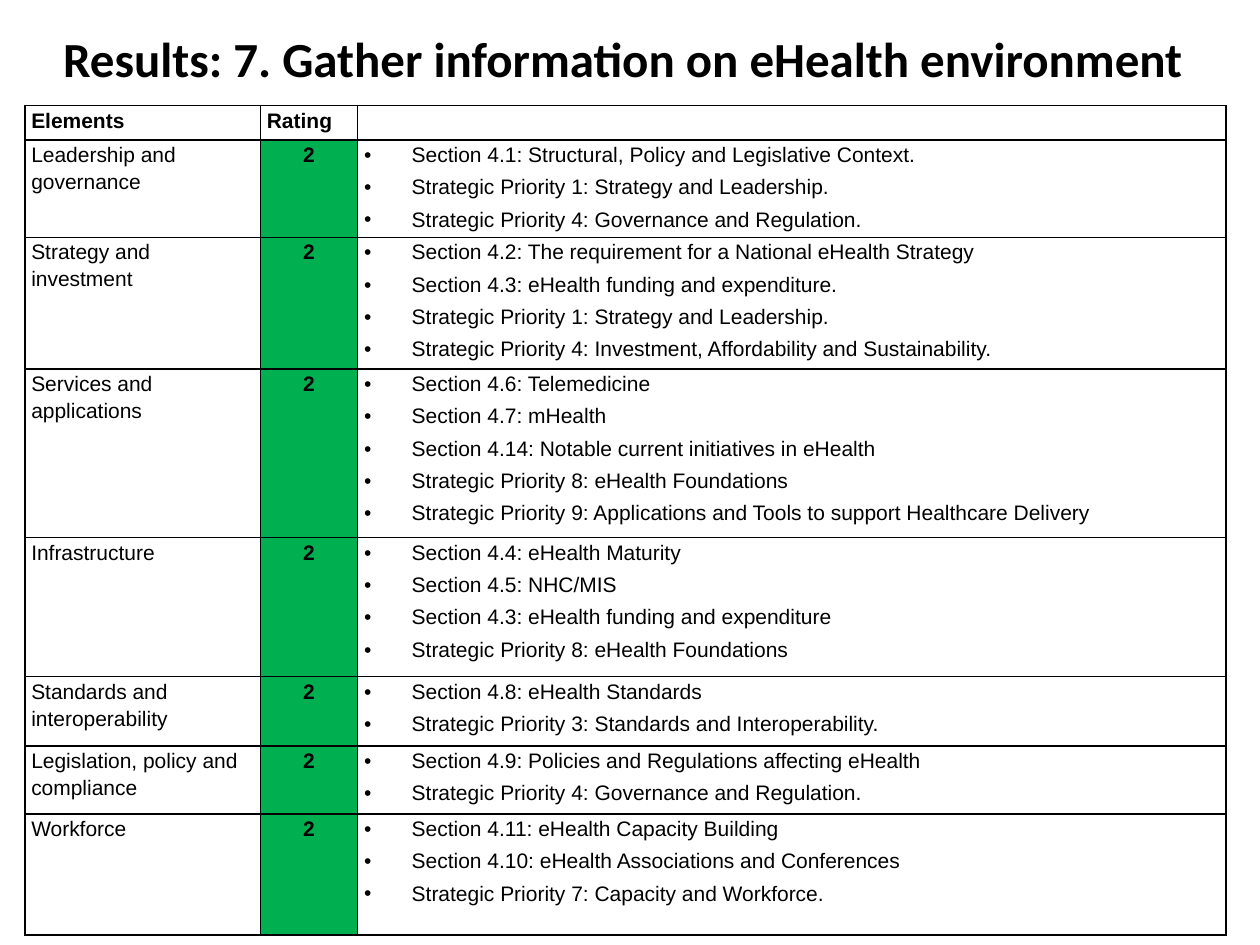
from dataclasses import dataclass

from lxml import etree
from pptx import Presentation
from pptx import util as u
from pptx.dml import color
from pptx.enum import text
from pptx.oxml import ns

BLACK = "000000"
GREEN = "00B050"
COLUMN_WIDTHS = (4.75, 1.96, 17.5)
HEADINGS = ("Elements", "Rating", "")
HEADER_HEIGHT = 0.69


@dataclass
class Element:
    name: str
    height: float
    evidence: tuple[str, ...]
    rating: str = "2"


ELEMENTS = (
    Element("Leadership and governance", 1.93, (
        "Section 4.1: Structural, Policy and Legislative Context.",
        "Strategic Priority 1: Strategy and Leadership.",
        "Strategic Priority 4: Governance and Regulation.",
    )),
    Element("Strategy and investment", 2.59, (
        "Section 4.2: The requirement for a National eHealth Strategy",
        "Section 4.3: eHealth funding and expenditure.",
        "Strategic Priority 1: Strategy and Leadership.",
        "Strategic Priority 4: Investment, Affordability and Sustainability.",
    )),
    Element("Services and applications", 3.4, (
        "Section 4.6: Telemedicine",
        "Section 4.7: mHealth",
        "Section 4.14: Notable current initiatives in eHealth",
        "Strategic Priority 8: eHealth Foundations",
        "Strategic Priority 9: Applications and Tools to support Healthcare Delivery",
    )),
    Element("Infrastructure", 2.8, (
        "Section 4.4: eHealth Maturity",
        "Section 4.5: NHC/MIS",
        "Section 4.3: eHealth funding and expenditure",
        "Strategic Priority 8: eHealth Foundations",
    )),
    Element("Standards and interoperability", 1.4, (
        "Section 4.8: eHealth Standards",
        "Strategic Priority 3: Standards and Interoperability.",
    )),
    Element("Legislation, policy and compliance", 1.37, (
        "Section 4.9: Policies and Regulations affecting eHealth",
        "Strategic Priority 4: Governance and Regulation.",
    )),
    Element("Workforce", 2.44, (
        "Section 4.11: eHealth Capacity Building",
        "Section 4.10: eHealth Associations and Conferences",
        "Strategic Priority 7: Capacity and Workforce.",
    )),
)


def hex_color(value: str) -> color.RGBColor:
    return color.RGBColor.from_string(value)


def add_span(para, words: str, font: str, size: int, bold: bool) -> None:
    span = para.add_run()
    span.text = words
    span.font.name = font
    span.font.size = u.Pt(size)
    span.font.bold = bold
    span.font.color.rgb = hex_color(BLACK)


def add_bullet(para) -> None:
    properties = para._p.get_or_add_pPr()
    indent = u.Cm(0.96)
    properties.set("marL", str(indent))
    properties.set("indent", str(-indent))
    etree.SubElement(properties, ns.qn("a:buFont"), typeface="Arial")
    etree.SubElement(properties, ns.qn("a:buChar"), char="•")


def add_borders(cell) -> None:
    properties = cell._tc.get_or_add_tcPr()
    for side in ("L", "R", "T", "B"):
        line = etree.SubElement(properties, ns.qn(f"a:ln{side}"), w=str(u.Pt(1)))
        fill = etree.SubElement(line, ns.qn("a:solidFill"))
        etree.SubElement(fill, ns.qn("a:srgbClr"), val=BLACK)


def fill_cell(cell, lines: tuple[str, ...], bold: bool = False,
              centred: bool = False, bulleted: bool = False,
              shade: str | None = None) -> None:
    cell.margin_left = cell.margin_right = u.Cm(0.13)
    cell.margin_top = cell.margin_bottom = u.Cm(0)
    add_borders(cell)
    if shade:
        cell.fill.solid()
        cell.fill.fore_color.rgb = hex_color(shade)
    else:
        cell.fill.background()
    frame = cell.text_frame
    for index, words in enumerate(lines):
        para = frame.add_paragraph() if index else frame.paragraphs[0]
        para.line_spacing = 1.15
        para.space_before = u.Pt(3)
        if centred:
            para.alignment = text.PP_ALIGN.CENTER
        if bulleted:
            add_bullet(para)
        if words:
            add_span(para, words, "Arial", 12, bold)
        else:
            etree.SubElement(para._p, ns.qn("a:endParaRPr"), sz="1200")


def add_title(page, words: str) -> None:
    box = page.shapes.add_textbox(u.Cm(0), u.Cm(0.03), u.Cm(25.1), u.Cm(2.29))
    frame = box.text_frame
    frame.word_wrap = True
    frame.vertical_anchor = text.MSO_ANCHOR.MIDDLE
    para = frame.paragraphs[0]
    para.alignment = text.PP_ALIGN.CENTER
    add_span(para, words, "Calibri", 28, True)


def add_ratings(page) -> None:
    heights = (HEADER_HEIGHT, *(element.height for element in ELEMENTS))
    table = page.shapes.add_table(
        len(heights), len(COLUMN_WIDTHS), u.Cm(0.5), u.Cm(2.13),
        u.Cm(sum(COLUMN_WIDTHS)), u.Cm(sum(heights))).table
    table.first_row = table.horz_banding = False
    for column, width in zip(table.columns, COLUMN_WIDTHS):
        column.width = u.Cm(width)
    for row, height in zip(table.rows, heights):
        row.height = u.Cm(height)
    for column, heading in enumerate(HEADINGS):
        fill_cell(table.cell(0, column), (heading,), bold=True)
    for row, element in enumerate(ELEMENTS, start=1):
        fill_cell(table.cell(row, 0), (element.name,))
        fill_cell(table.cell(row, 1), (element.rating,), bold=True,
                  centred=True, shade=GREEN)
        fill_cell(table.cell(row, 2), element.evidence, bulleted=True)


def main() -> None:
    deck = Presentation()
    deck.slide_width, deck.slide_height = u.Cm(25.4), u.Cm(19.05)
    page = deck.slides.add_slide(deck.slide_layouts[6])
    add_title(page, "Results: 7. Gather information on eHealth environment")
    add_ratings(page)
    deck.save("out.pptx")


if __name__ == "__main__":
    main()
